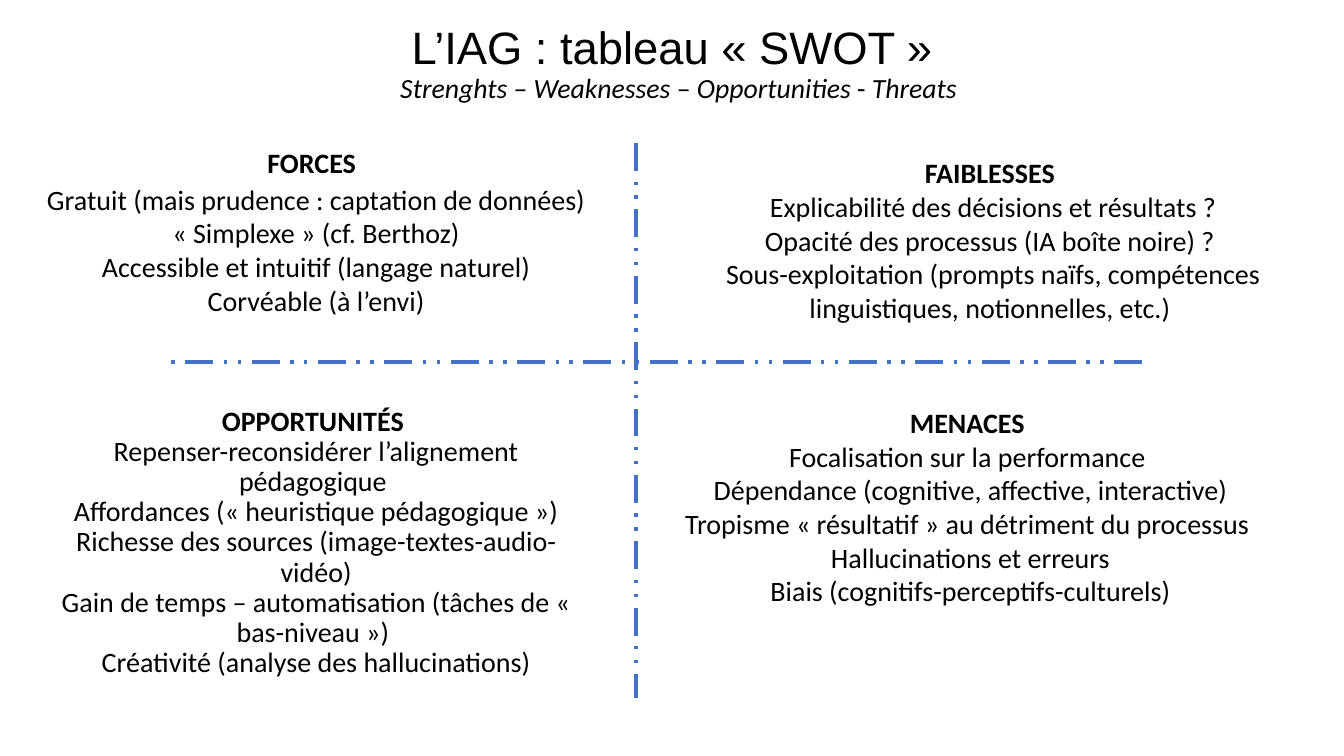
"""Build a SWOT slide: a title and four quadrants split by two dashed axes."""
from lxml import etree
from pptx import Presentation
from pptx.dml.color import RGBColor
from pptx.enum import dml, shapes, text
from pptx.oxml.ns import qn
from pptx.util import Inches, Pt

BLACK = RGBColor(0, 0, 0)
BLUE = RGBColor(0x44, 0x72, 0xC4)

TITLE = "L’IAG : tableau « SWOT » "
TITLE_BOX = (0.31, 0.2, 12.84, 0.88)
SUBTITLE = [("Strenghts", True), (" – ", False), ("Weaknesses", True), (" – ", False),
            ("Opportunities", True), (" - ", False), ("Threats", True)]

QUADRANTS = [
    {"box": (0.31, 1.34, 5.65, 2), "heading": "FORCES", "heading_spacing": 0.9,
     "item_spacing": 1.0, "gap_size": 28, "items": [
         "Gratuit (mais prudence : captation de données)",
         "« Simplexe » (cf. Berthoz)",
         "Accessible et intuitif (langage naturel)",
         "Corvéable (à l’envi)"]},
    {"box": (6.67, 1.43, 6.36, 1.86), "heading": "FAIBLESSES", "heading_spacing": 1.2,
     "item_spacing": 1.0, "gap_size": 20, "items": [
         "Explicabilité des décisions et résultats ?",
         "Opacité des processus (IA boîte noire) ? ",
         "Sous-exploitation (prompts naïfs, compétences linguistiques, notionnelles, etc.) "]},
    {"box": (0.31, 3.92, 5.65, 2.99), "heading": "OPPORTUNITÉS", "heading_spacing": 1.1,
     "item_spacing": 0.9, "gap_size": 20, "items": [
         "Repenser-reconsidérer l’alignement pédagogique ",
         "Affordances (« heuristique pédagogique »)",
         "Richesse des sources (image-textes-audio-vidéo)",
         "Gain de temps – automatisation (tâches de « bas-niveau ») ",
         "Créativité (analyse des hallucinations)"]},
    {"box": (6.67, 3.91, 5.91, 2.34), "heading": "MENACES", "heading_spacing": 1.2,
     "item_spacing": 1.0, "gap_size": 20, "items": [
         "Focalisation sur la performance ",
         "Dépendance (cognitive, affective, interactive)",
         "Tropisme « résultatif » au détriment du processus ",
         "Hallucinations et erreurs",
         "Biais (cognitifs-perceptifs-culturels)"]},
]
AXES = [(6.31, 1.42, 6.31, 6.92), (11.33, 3.59, 1.6, 3.59)]


def add_frame(slide, box, anchor):
    frame = slide.shapes.add_textbox(*map(Inches, box)).text_frame
    frame.word_wrap = True
    frame.vertical_anchor = anchor
    return frame


def style(paragraph, spacing, size=20, bold=False):
    paragraph.alignment = text.PP_ALIGN.CENTER
    paragraph.line_spacing = spacing
    paragraph.font.name = "Calibri"
    paragraph.font.size = Pt(size)
    paragraph.font.bold = bold
    paragraph.font.color.rgb = BLACK


def add_run(paragraph, words):
    run = paragraph.add_run()
    run.text = words
    return run


def add_title(slide):
    heading = add_frame(slide, TITLE_BOX, text.MSO_ANCHOR.MIDDLE).paragraphs[0]
    style(heading, 0.9, 19.8)
    main = add_run(heading, TITLE)
    main.font.name = "Arial"
    main.font.size = Pt(32.4)
    heading.add_line_break()
    for words, italic in SUBTITLE:
        add_run(heading, words).font.italic = italic


def add_quadrant(slide, quadrant):
    frame = add_frame(slide, quadrant["box"], text.MSO_ANCHOR.TOP)
    heading = frame.paragraphs[0]
    style(heading, quadrant["heading_spacing"], bold=True)
    add_run(heading, quadrant["heading"])
    add_run(heading, " ").font.size = Pt(quadrant["gap_size"])
    for item in quadrant["items"]:
        paragraph = frame.add_paragraph()
        style(paragraph, quadrant["item_spacing"])
        add_run(paragraph, item)


def add_axis(slide, ends):
    axis = slide.shapes.add_connector(shapes.MSO_CONNECTOR.STRAIGHT, *map(Inches, ends))
    axis.line.color.rgb = BLUE
    axis.line.width = Pt(2.5)
    axis.line.dash_style = dml.MSO_LINE.DASH_DOT_DOT
    etree.SubElement(axis._element.spPr, qn("a:effectLst"))


def main():
    deck = Presentation()
    deck.slide_width, deck.slide_height = Inches(13.33), Inches(7.5)
    slide = deck.slides.add_slide(deck.slide_layouts[6])
    add_title(slide)
    for quadrant in QUADRANTS:
        add_quadrant(slide, quadrant)
    for ends in AXES:
        add_axis(slide, ends)
    deck.save("out.pptx")


if __name__ == "__main__":
    main()
